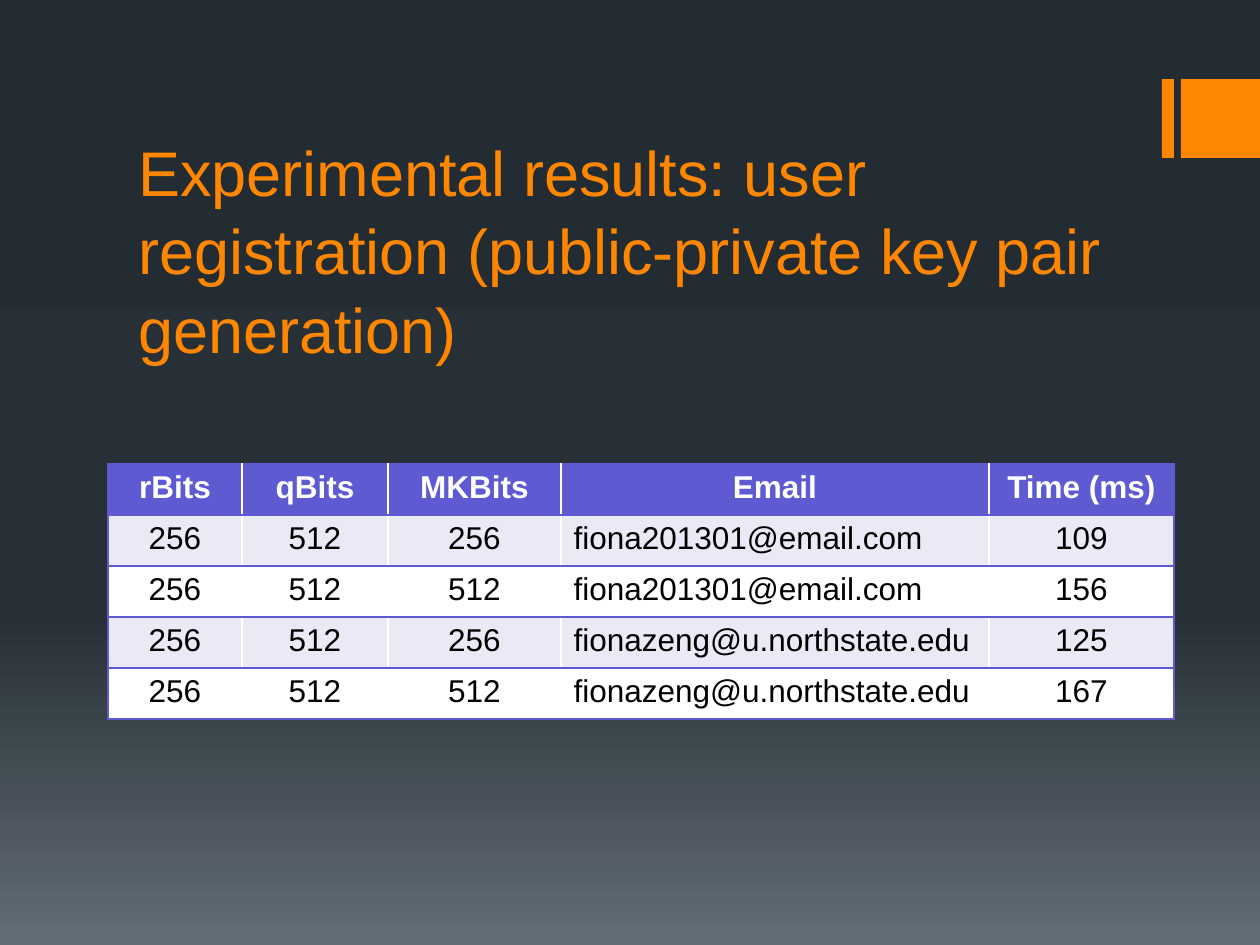
import copy
import pptx
import pptx.dml.color
import pptx.enum.shapes
import pptx.enum.text
import pptx.oxml
import pptx.oxml.ns
import pptx.util

HUES = {
    "accent": "FF8600", "grid": "5D5AD2", "band": "EAEAF7", "white": "FFFFFF",
    "black": "000000", "top": "242C33", "mid": "273037", "base": "636D76",
}
ALIGN = pptx.enum.text.PP_ALIGN


def px(count):
    return pptx.util.Emu(round(count * 914400 / 126))


def hue(name):
    return pptx.dml.color.RGBColor.from_string(HUES[name])


deck = pptx.Presentation()
deck.slide_width, deck.slide_height = px(1260), px(945)
slide = deck.slides.add_slide(deck.slide_layouts[6])

back = slide.background.fill
back.gradient()
back.gradient_angle = 270
first = back.gradient_stops[0]._gs
first.addnext(copy.deepcopy(first))
for stop, (place, name) in zip(back.gradient_stops, [(0, "top"), (0.65, "mid"), (1, "base")]):
    stop.position = place
    stop.color.rgb = hue(name)

for left, width in [(1162, 12), (1181, 79)]:
    bar = slide.shapes.add_shape(
        pptx.enum.shapes.MSO_SHAPE.RECTANGLE, px(left), px(79), px(width), px(79))
    bar.shadow.inherit = False
    bar.fill.solid()
    bar.fill.fore_color.rgb = hue("accent")
    bar.line.fill.background()

title = slide.shapes.add_textbox(px(126), px(213), px(1008), px(159)).text_frame
title.word_wrap = True
title.vertical_anchor = pptx.enum.text.MSO_ANCHOR.BOTTOM
title.text = "Experimental results: user registration (public-private key pair generation)"
para = title.paragraphs[0]
para.line_spacing = 1.04
para.font.name = "Arial"
para.font.size = pptx.util.Pt(36)
para.font.color.rgb = hue("accent")

rows = [
    ["rBits", "qBits", "MKBits", "Email", "Time (ms)"],
    ["256", "512", "256", "fiona201301@email.com", "109"],
    ["256", "512", "512", "fiona201301@email.com", "156"],
    ["256", "512", "256", "fionazeng@u.northstate.edu", "125"],
    ["256", "512", "512", "fionazeng@u.northstate.edu", "167"],
]
widths = [134, 146, 173, 428, 185]
table = slide.shapes.add_table(
    len(rows), len(widths), px(108), px(464), px(sum(widths)), px(51 * len(rows))).table
for col, width in zip(table.columns, widths):
    col.width = px(width)

for r, row in enumerate(rows):
    table.rows[r].height = px(51)
    for c, text in enumerate(row):
        cell = table.cell(r, c)
        cell.text = text
        para = cell.text_frame.paragraphs[0]
        para.alignment = ALIGN.LEFT if r and c == 3 else ALIGN.CENTER
        para.font.name = "Arial"
        para.font.size = pptx.util.Pt(18)
        para.font.bold = r == 0
        para.font.color.rgb = hue("black" if r else "white")
        sides = "L" * (c == 0) + "R" * (c == len(widths) - 1) + "TB"
        for side in sides:
            edge = pptx.oxml.parse_xml(
                f'<a:ln{side} {pptx.oxml.ns.nsdecls("a")} w="12700"><a:solidFill>'
                f'<a:srgbClr val="{HUES["grid"]}"/></a:solidFill></a:ln{side}>')
            cell._tc.get_or_add_tcPr().append(edge)
        cell.fill.solid()
        cell.fill.fore_color.rgb = hue("grid" if r == 0 else "band" if r % 2 else "white")

deck.save("out.pptx")
